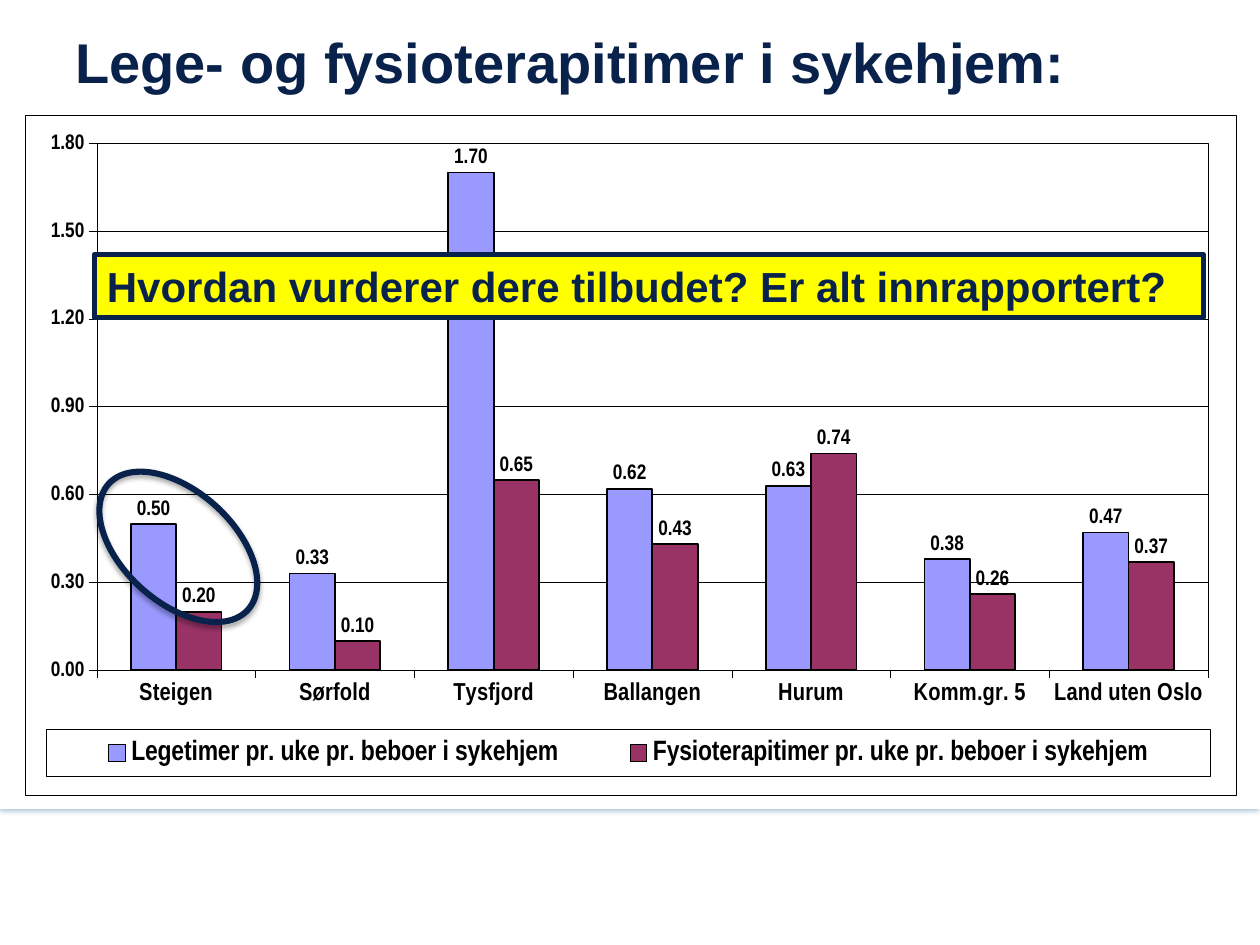
from lxml import etree
from pptx import Presentation
from pptx.chart.data import CategoryChartData
from pptx.dml.color import RGBColor
from pptx.enum.chart import XL_CHART_TYPE as Kind, XL_LABEL_POSITION as Spot
from pptx.enum.chart import XL_LEGEND_POSITION as Side, XL_TICK_MARK as Tick
from pptx.enum.shapes import MSO_SHAPE as Form
from pptx.enum.text import MSO_ANCHOR as Anchor, PP_ALIGN as Align
from pptx.oxml import parse_xml
from pptx.oxml.ns import qn
from pptx.util import Inches, Pt

# Colours
NAVY = RGBColor(0x09, 0x22, 0x4B)
BLACK = RGBColor(0, 0, 0)
WHITE = RGBColor(255, 255, 255)
YELLOW = RGBColor(255, 255, 0)
BLUE = RGBColor(0x00, 0x51, 0x93)
LILAC = RGBColor(0x99, 0x99, 0xFF)
PLUM = RGBColor(0x99, 0x33, 0x66)

# Content
TITLE = "Lege- og fysioterapitimer i sykehjem:"
ASK = "Hvordan vurderer dere tilbudet? Er alt innrapportert?"
TOWNS = ["Steigen", "Sørfold", "Tysfjord", "Ballangen", "Hurum",
         "Komm.gr. 5", "Land uten Oslo"]
HOURS = [
    ("Legetimer pr. uke pr. beboer i sykehjem", LILAC,
     [0.5, 0.33, 1.7, 0.62, 0.63, 0.38, 0.47]),
    ("Fysioterapitimer pr. uke pr. beboer i sykehjem", PLUM,
     [0.2, 0.1, 0.65, 0.43, 0.74, 0.26, 0.37]),
]

# Places: left, top, width, height in percent of the slide
WIDE, HIGH = Inches(10), Inches(7.5)
AREAS = {
    "panel": (0, 0, 100, 85.6),
    "title": (5, 1.73, 90, 9.47),
    "chart": (2, 12.2, 96.1, 72),
    "ring": (6.7, 52, 14.9, 11.73),
    "ask": (7.5, 26.93, 88, 6.67),
}
# Places inside the chart, in percent of the chart
PLOT = (5.9, 4.1, 91.8, 77.5)
KEY = (1.7, 90.3, 96.2, 6.9)

# Formats
FACE, NARROW = "Arial", "Arial Narrow"
HAIR = 0.25
DIGITS = {"number_format": "0.00", "number_format_is_linked": False}
TICKS = {"major_tick_mark": Tick.OUTSIDE, "minor_tick_mark": Tick.NONE}
SCALE = {"minimum_scale": 0, "maximum_scale": 1.8, "major_unit": 0.3,
         "has_major_gridlines": True}
COLUMNS = {"gap_width": 150, "overlap": 0, "vary_by_categories": False}
TAGS = {"show_value": True, "position": Spot.OUTSIDE_END, **DIGITS}
LEGEND = {"position": Side.RIGHT, "include_in_layout": False}
WRAP = {"word_wrap": True, "vertical_anchor": Anchor.MIDDLE}
NS = ('xmlns:c="http://schemas.openxmlformats.org/drawingml/2006/chart" '
      'xmlns:a="http://schemas.openxmlformats.org/drawingml/2006/main"')


# Shared helpers
def apply(item, form):
    for name, val in form.items():
        setattr(item, name, val)


def place(name):
    return [round(side * share / 100)
            for side, share in zip((WIDE, HIGH) * 2, AREAS[name])]


def style(font, size, face=NARROW, color=BLACK):
    apply(font, {"size": Pt(size), "name": face, "bold": True})
    font.color.rgb = color


def paint(fill, color):
    fill.solid()
    fill.fore_color.rgb = color


def rule(line, color=BLACK, width=HAIR):
    line.color.rgb = color
    line.width = Pt(width)


# Shapes and text
def write(shape, text, size):
    apply(shape.text_frame, WRAP)
    para = shape.text_frame.paragraphs[0]
    para.alignment = Align.LEFT
    run = para.add_run()
    run.text = text
    style(run.font, size, FACE, NAVY)


def shade(shape, color):
    glow = shape.element.spPr.find(qn("a:effectLst"))
    drop = etree.SubElement(
        glow, qn("a:outerShdw"), blurRad=str(Pt(3.1)), dist=str(Pt(1.8)),
        dir="5400000", rotWithShape="0")
    tint = etree.SubElement(drop, qn("a:srgbClr"), val=str(color))
    etree.SubElement(tint, qn("a:alpha"), val="35000")


def draw(slide, form, name, fill=None, width=0):
    shape = slide.shapes.add_shape(form, *place(name))
    shape.shadow.inherit = False
    if fill is None:
        shape.fill.background()
    else:
        paint(shape.fill, fill)
    if width:
        rule(shape.line, NAVY, width)
    else:
        shape.line.fill.background()
    return shape


# Chart XML: fixed places and framed areas
def layout(box, inner=False):
    tags = [("layoutTarget", "inner")] if inner else []
    tags += [("xMode", "edge"), ("yMode", "edge")]
    tags += [(side, share / 100) for side, share in zip("xywh", box)]
    body = "".join(f'<c:{tag} val="{val}"/>' for tag, val in tags)
    return parse_xml(f"<c:layout {NS}><c:manualLayout>{body}"
                     "</c:manualLayout></c:layout>")


def frame():
    return parse_xml(
        f'<c:spPr {NS}><a:solidFill><a:srgbClr val="{WHITE}"/></a:solidFill>'
        f'<a:ln w="{Pt(HAIR)}"><a:solidFill><a:srgbClr val="{BLACK}"/>'
        "</a:solidFill></a:ln></c:spPr>")


def clear(part):
    for old in part.findall(qn("c:layout")):
        part.remove(old)


# Chart parts
def set_axes(chart):
    towns, hours = chart.category_axis, chart.value_axis
    for axis, size in ((towns, 14), (hours, 12)):
        apply(axis, TICKS)
        style(axis.tick_labels.font, size)
        rule(axis.format.line)
    apply(hours, SCALE)
    apply(hours.tick_labels, DIGITS)
    rule(hours.major_gridlines.format.line)


def set_bars(plot):
    apply(plot, COLUMNS)
    for bars, (_, color, _) in zip(plot.series, HOURS):
        paint(bars.format.fill, color)
        rule(bars.format.line, width=1)
        apply(bars.data_labels, TAGS)
        style(bars.data_labels.font, 12)


def set_legend(chart):
    chart.has_legend = True
    legend = chart.legend
    apply(legend, LEGEND)
    style(legend.font, 16)
    part = legend._element
    clear(part)
    part.find(qn("c:legendPos")).addnext(layout(KEY))
    part.find(qn("c:overlay")).addnext(frame())


def set_frames(chart):
    root = chart._chartSpace.find(qn("c:chart"))
    area = root.find(qn("c:plotArea"))
    clear(area)
    area.insert(0, layout(PLOT, inner=True))
    area.append(frame())
    root.addnext(frame())


def add_bars(slide):
    data = CategoryChartData(number_format="0.00")
    data.categories = TOWNS
    for name, _, vals in HOURS:
        data.add_series(name, vals)
    chart = slide.shapes.add_chart(
        Kind.COLUMN_CLUSTERED, *place("chart"), data).chart
    chart.has_title = False
    style(chart.font, 10)
    set_axes(chart)
    set_bars(chart.plots[0])
    set_legend(chart)
    set_frames(chart)


def main():
    deck = Presentation()
    deck.slide_width, deck.slide_height = WIDE, HIGH
    slide = deck.slides.add_slide(deck.slide_layouts[6])

    # Back to front
    panel = draw(slide, Form.RECTANGLE, "panel", WHITE)
    shade(panel, BLUE)
    write(slide.shapes.add_textbox(*place("title")), TITLE, 32)
    add_bars(slide)
    ring = draw(slide, Form.OVAL, "ring", width=3.5)
    ring.rotation = 42.1
    shade(ring, BLACK)
    write(draw(slide, Form.RECTANGLE, "ask", YELLOW, 3), ASK, 24)
    deck.save("out.pptx")


if __name__ == "__main__":
    main()
